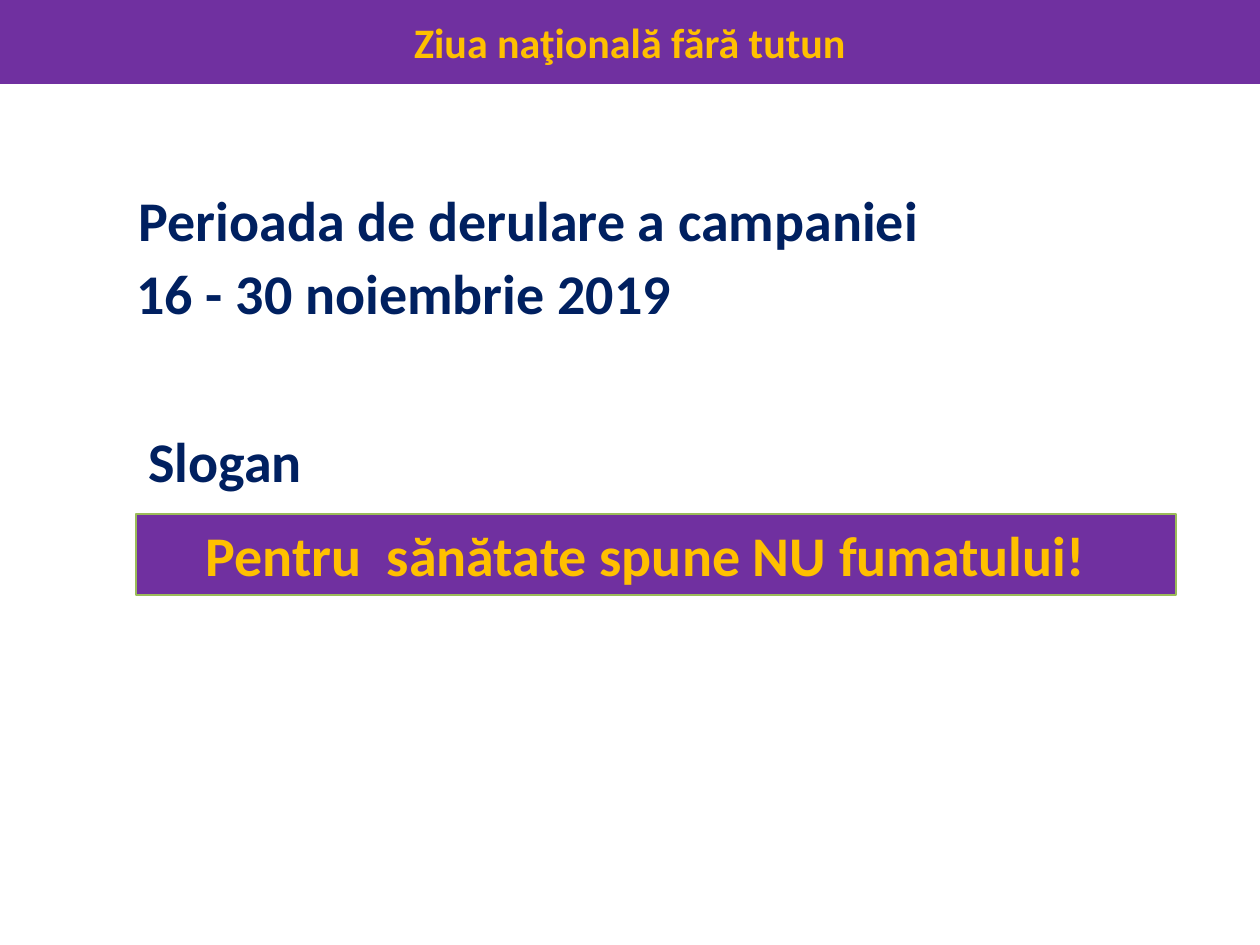
from pptx import Presentation
from pptx.dml.color import RGBColor
from pptx.enum.shapes import MSO_SHAPE
from pptx.enum.text import MSO_ANCHOR, MSO_AUTO_SIZE, PP_ALIGN
from pptx.util import Pt
from lxml import etree

LEFT, CENTER = PP_ALIGN.LEFT, PP_ALIGN.CENTER
TOP, MIDDLE = MSO_ANCHOR.TOP, MSO_ANCHOR.MIDDLE
RECT, FIXED = MSO_SHAPE.RECTANGLE, MSO_AUTO_SIZE.NONE
SCALE = 914400 / 126
COLORS = {"purple": "7030A0", "gold": "FFC000", "navy": "002060", "green": "9BBB59"}


def px(n):
    return round(n * SCALE)


def write(shape, box, text, color, size=32, align=LEFT, anchor=TOP):
    shape.left, shape.top, shape.width, shape.height = map(px, box)
    frame = shape.text_frame
    frame.text = text
    frame.word_wrap = True
    frame.auto_size = FIXED
    frame.vertical_anchor = anchor
    para = frame.paragraphs[0]
    para.alignment = align
    font = para.runs[0].font
    font.name, font.size, font.bold = "Calibri", Pt(size), True
    font.color.rgb = RGBColor.from_string(COLORS[color])


deck = Presentation()
deck.slide_width, deck.slide_height = px(1260), px(945)
slide = deck.slides.add_slide(deck.slide_layouts[1])
shapes = slide.shapes

title = shapes.title
write(title, (0, 0, 1260, 84), "Ziua naţională fără tutun", "gold", 24, CENTER, MIDDLE)

period = slide.placeholders[1]
write(period, (63, 179, 1040, 105), "Perioada de derulare a campaniei", "navy")
props = period.text_frame.paragraphs[0]._p.get_or_add_pPr()
props.set("marL", str(px(63)))
props.set("indent", "0")
etree.SubElement(props, "{http://schemas.openxmlformats.org/drawingml/2006/main}buNone")

for box, text, align in (
    ((73, 252, 662, 81), "16 - 30 noiembrie 2019", CENTER),
    ((136, 420, 483, 81), "Slogan", LEFT),
):
    label = shapes.add_textbox(0, 0, 0, 0)
    write(label, box, text, "navy", align=align)

banner = shapes.add_shape(RECT, 0, 0, 0, 0)
write(banner, (136, 514, 1040, 81), "Pentru  sănătate spune NU fumatului!", "gold", align=CENTER)
banner.text_frame.margin_right = px(33)
banner.shadow.inherit = False
banner.line.color.rgb = RGBColor.from_string(COLORS["green"])
banner.line.width = Pt(0.75)

for shape in (title, banner):
    shape.fill.solid()
    shape.fill.fore_color.rgb = RGBColor.from_string(COLORS["purple"])

deck.save("out.pptx")
